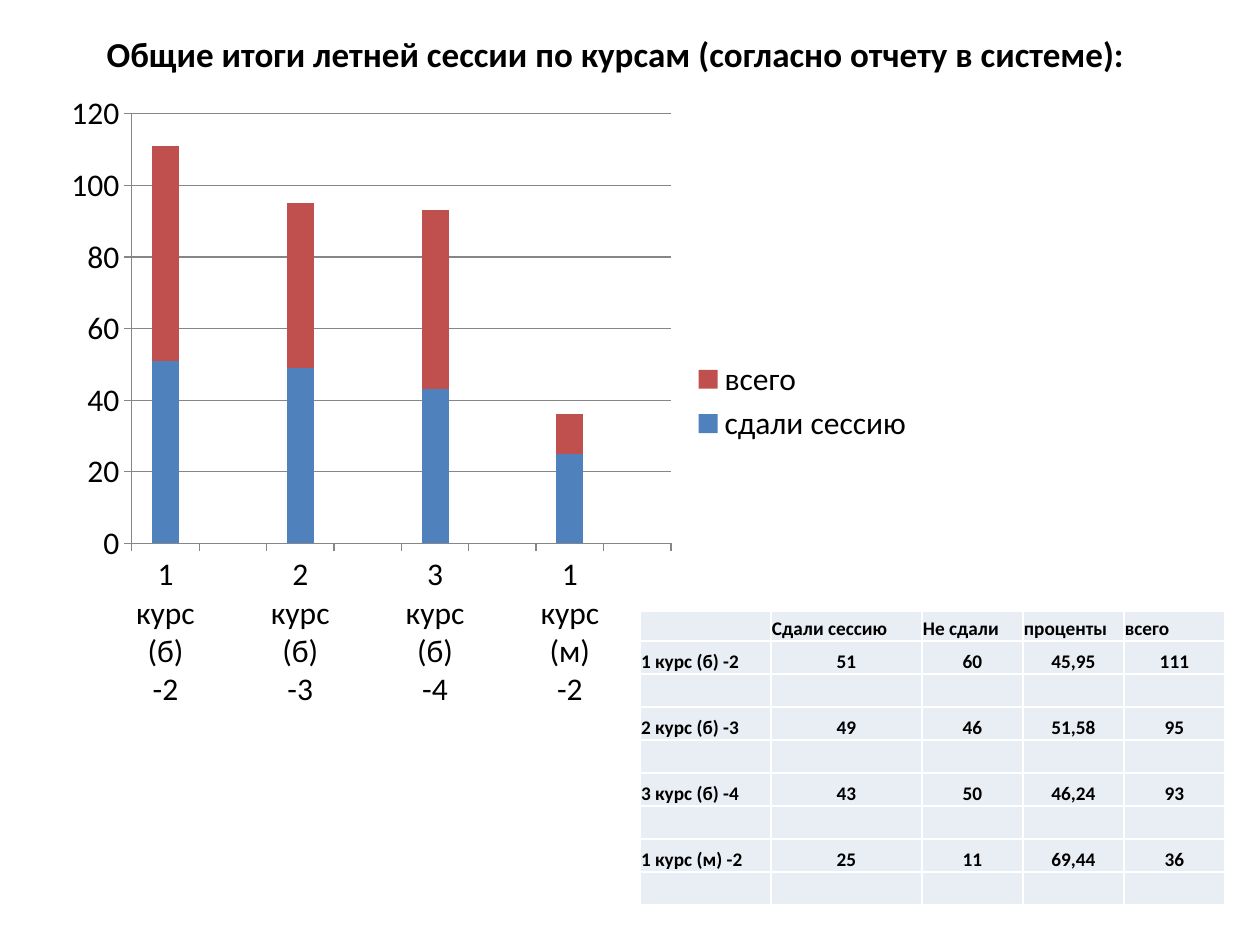
import pptx
import pptx.chart.data
import pptx.dml.color
import pptx.enum.chart
import pptx.enum.text
import pptx.oxml.ns
import pptx.util
from lxml import etree

PX_PER_INCH = 126
FONT = "Calibri"
BLACK = pptx.dml.color.RGBColor(0x00, 0x00, 0x00)
GRAY = pptx.dml.color.RGBColor(0x86, 0x86, 0x86)
BLUE = pptx.dml.color.RGBColor(0x4F, 0x81, 0xBD)
RED = pptx.dml.color.RGBColor(0xC0, 0x50, 0x4D)
CELL_FILL = pptx.dml.color.RGBColor(0xE9, 0xED, 0xF4)

TITLE = "Общие итоги летней сессии по курсам (согласно отчету в системе):"
HEADER = ("", "Сдали сессию", "Не сдали", "проценты", "всего")
# Course, passed, failed, percentage, total
RESULTS = [
    ("1 курс (б) -2", 51, 60, "45,95", 111),
    ("2 курс (б) -3", 49, 46, "51,58", 95),
    ("3 курс (б) -4", 43, 50, "46,24", 93),
    ("1 курс (м) -2", 25, 11, "69,44", 36),
]
COLUMN_WIDTHS = (131, 151, 101, 101, 101)
HEADER_HEIGHT, ROW_HEIGHT = 30, 33


def px(length):
    return pptx.util.Emu(round(length * 914400 / PX_PER_INCH))


def format_font(font, size, bold=False):
    font.name = FONT
    font.size = pptx.util.Pt(size)
    font.bold = bold
    font.color.rgb = BLACK


def add_title(page, text, left, top, width, height):
    box = page.shapes.title
    box.left, box.top, box.width, box.height = map(px, (left, top, width, height))
    frame = box.text_frame
    frame.word_wrap = False
    frame.auto_size = pptx.enum.text.MSO_AUTO_SIZE.SHAPE_TO_FIT_TEXT
    frame.vertical_anchor = pptx.enum.text.MSO_ANCHOR.TOP
    para = frame.paragraphs[0]
    para.alignment = pptx.enum.text.PP_ALIGN.LEFT
    span = para.add_run()
    span.text = text
    format_font(span.font, 20, bold=True)


def format_axis(axis):
    axis.major_tick_mark = pptx.enum.chart.XL_TICK_MARK.OUTSIDE
    axis.minor_tick_mark = pptx.enum.chart.XL_TICK_MARK.NONE
    axis.format.line.color.rgb = GRAY
    format_font(axis.tick_labels.font, 18)


def add_results_chart(page, left, top, width, height):
    # An empty category follows every course
    categories, passed, failed = [], [], []
    for course, passed_count, failed_count, *_ in RESULTS:
        categories += [course, ""]
        passed += [passed_count, None]
        failed += [failed_count, None]
    data = pptx.chart.data.CategoryChartData()
    data.categories = categories
    data.add_series("сдали сессию", passed)
    data.add_series("всего", failed)

    chart = page.shapes.add_chart(
        pptx.enum.chart.XL_CHART_TYPE.COLUMN_STACKED,
        *map(px, (left, top, width, height)), data).chart
    chart.has_title = False
    format_font(chart.font, 18)
    plot = chart.plots[0]
    plot.gap_width, plot.overlap = 150, 100
    plot.vary_by_categories = False
    for series, color in zip(plot.series, (BLUE, RED)):
        series.format.fill.solid()
        series.format.fill.fore_color.rgb = color

    format_axis(chart.category_axis)
    format_axis(chart.value_axis)
    chart.value_axis.minimum_scale = 0
    chart.value_axis.maximum_scale = 120
    chart.value_axis.major_unit = 20
    chart.value_axis.has_major_gridlines = True
    chart.value_axis.major_gridlines.format.line.color.rgb = GRAY

    chart.has_legend = True
    chart.legend.position = pptx.enum.chart.XL_LEGEND_POSITION.RIGHT
    chart.legend.include_in_layout = False
    format_font(chart.legend.font, 18)


def fill_cell(cell, text, centered):
    cell.fill.solid()
    cell.fill.fore_color.rgb = CELL_FILL
    cell.vertical_anchor = pptx.enum.text.MSO_ANCHOR.BOTTOM
    cell.margin_left = cell.margin_right = cell.margin_top = px(1)
    cell.margin_bottom = 0
    para = cell.text_frame.paragraphs[0]
    if text:
        if centered:
            para.alignment = pptx.enum.text.PP_ALIGN.CENTER
        span = para.add_run()
        span.text = text
        format_font(span.font, 11, bold=True)
    else:
        # Keeps an empty row from growing to the default text size
        etree.SubElement(para._p, pptx.oxml.ns.qn("a:endParaRPr"), sz="1100")


def add_results_table(page, left, top):
    blank = ("",) * len(HEADER)
    rows = [HEADER]
    for result in RESULTS:
        rows += [result, blank]
    heights = [HEADER_HEIGHT] + [ROW_HEIGHT] * (len(rows) - 1)
    table = page.shapes.add_table(
        len(rows), len(HEADER), px(left), px(top),
        px(sum(COLUMN_WIDTHS)), px(sum(heights))).table
    table.first_row = table.horz_banding = False
    for column, width in zip(table.columns, COLUMN_WIDTHS):
        column.width = px(width)
    for row_index, (values, height) in enumerate(zip(rows, heights)):
        table.rows[row_index].height = px(height)
        for column_index, value in enumerate(values):
            centered = row_index > 0 and column_index > 0
            fill_cell(table.cell(row_index, column_index), str(value), centered)


def main():
    deck = pptx.Presentation()
    deck.slide_width, deck.slide_height = px(1260), px(945)
    page = deck.slides.add_slide(deck.slide_layouts[5])
    add_results_chart(page, 54, 82, 873, 639)
    add_results_table(page, 640, 611)
    add_title(page, TITLE, 94, 26, 1051, 55)
    deck.save("out.pptx")


if __name__ == "__main__":
    main()
